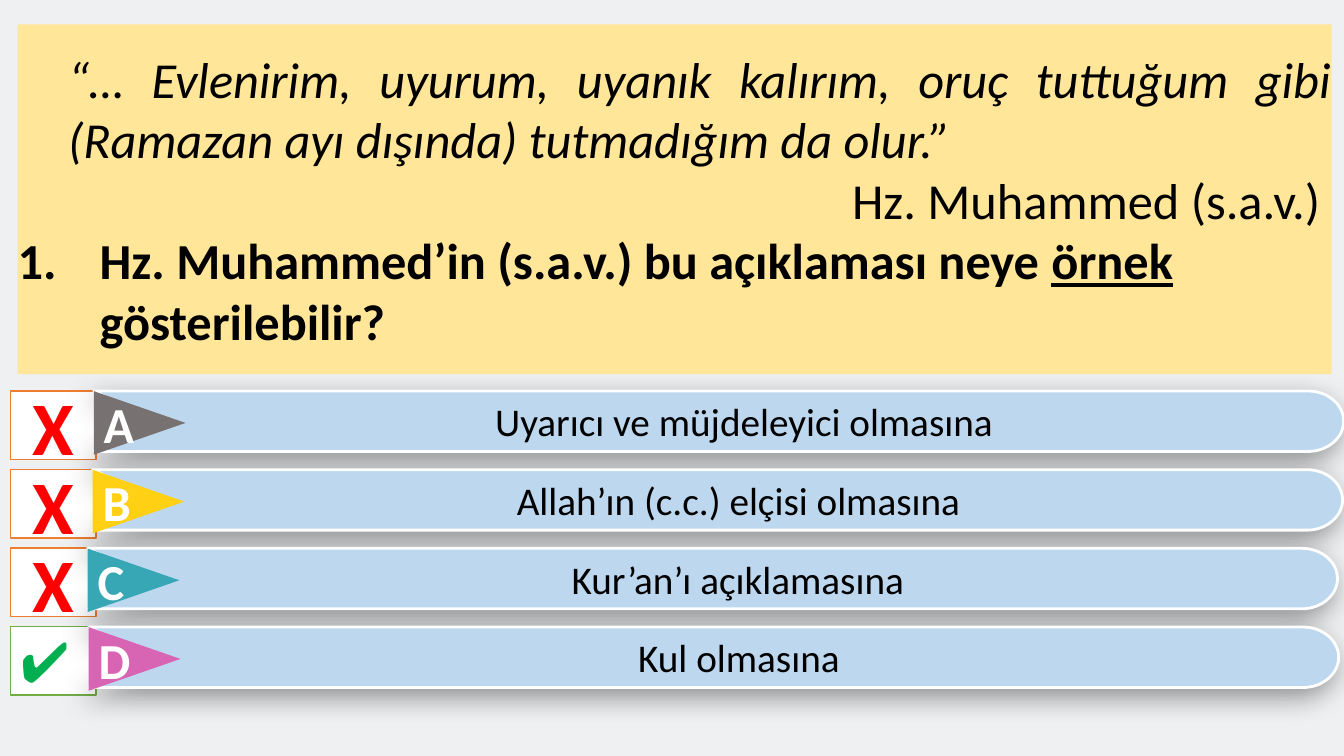
from lxml.etree import SubElement
from pptx import Presentation
from pptx.dml.color import RGBColor
from pptx.enum.shapes import MSO_SHAPE as Preset
from pptx.enum.text import MSO_ANCHOR as Anchor, PP_ALIGN as Align
from pptx.oxml.ns import qn
from pptx.util import Pt

BACKDROP = RGBColor(0xEE, 0xF0, 0xF2)
CREAM = RGBColor(0xFF, 0xE6, 0x99)
SKY = RGBColor(0xBD, 0xD7, 0xEE)
BLACK = RGBColor(0, 0, 0)
WHITE = RGBColor(0xFF, 0xFF, 0xFF)
RED = RGBColor(0xFF, 0, 0)
ORANGE = RGBColor(0xED, 0x7D, 0x31)
CHECK_GREEN = RGBColor(0, 0xB0, 0x50)
BORDER_GREEN = RGBColor(0x70, 0xAD, 0x47)
GRAY = RGBColor(0x77, 0x71, 0x71)
YELLOW = RGBColor(0xFF, 0xD0, 0x13)
TEAL = RGBColor(0x38, 0xA7, 0xB5)
PINK = RGBColor(0xD8, 0x64, 0xB4)

ANSWERS = [
    ("A", "Uyarıcı ve müjdeleyici olmasına", GRAY, 67),
    ("B", "Allah’ın (c.c.) elçisi olmasına ", YELLOW, 66.2),
    ("C", "Kur’an’ı açıklamasına", TEAL, 62.6),
    ("D", "Kul olmasına", PINK, 63.4),
]
CORRECT = "D"
FIRST_TOP = 279.3
VERDICT_STEP = 56
ANSWER_STEP = 56.2


class QuizPage:
    """Draws the parts of a quiz question on one slide in a shared style."""

    font = "Calibri"
    bar_width, bar_height = 892.8, 43.2
    round_x, round_y = 25.4, 21.6
    curve = 0.55
    notch = 45.2
    flag_width, flag_height = 45.4, 65.5

    def __init__(self, page):
        self.page = page
        page.background.fill.solid()
        page.background.fill.fore_color.rgb = BACKDROP

    def paint(self, shape, fill, line=None, width=1):
        shape.shadow.inherit = False
        shape.fill.solid()
        shape.fill.fore_color.rgb = fill
        if line is None:
            shape.line.fill.background()
        else:
            shape.line.color.rgb = line
            shape.line.width = Pt(width)
        shape.text_frame.word_wrap = True
        shape.text_frame.vertical_anchor = Anchor.MIDDLE

    def indent(self, para, left, hanging=0, number=None):
        props = para._p.get_or_add_pPr()
        props.set("marL", str(Pt(left)))
        props.set("indent", str(Pt(-hanging)))
        if number:
            SubElement(props, qn("a:buFont"), typeface="+mj-lt")
            SubElement(props, qn("a:buAutoNum"), type=number)

    def span(self, para, text, size, color=BLACK, bold=False, italic=False, underline=False):
        span = para.add_run()
        span.text = text
        font = span.font
        font.name, font.size, font.color.rgb = self.font, Pt(size), color
        font.bold, font.italic, font.underline = bold, italic, underline

    def question(self):
        box = self.page.shapes.add_shape(Preset.RECTANGLE, Pt(12.7), Pt(17.5), Pt(938.6), Pt(249.8))
        self.paint(box, CREAM)
        frame = box.text_frame
        frame.margin_left = frame.margin_right = frame.margin_top = frame.margin_bottom = 0
        quote = frame.paragraphs[0]
        quote.level, quote.alignment = 1, Align.JUSTIFY
        self.indent(quote, 36)
        self.span(quote, "“… Evlenirim, uyurum, uyanık kalırım, oruç tuttuğum gibi "
                         "(Ramazan ayı dışında) tutmadığım da olur.” ", 36, italic=True)
        speaker = frame.add_paragraph()
        speaker.alignment = Align.RIGHT
        self.span(speaker, "Hz. Muhammed (s.a.v.) ", 36)
        prompt = frame.add_paragraph()
        prompt.alignment = Align.LEFT
        self.indent(prompt, 58.5, 58.5, "arabicPeriod")
        self.span(prompt, "Hz. Muhammed’in (s.a.v.) bu açıklaması neye ", 36, bold=True)
        self.span(prompt, "örnek", 36, bold=True, underline=True)
        self.span(prompt, " gösterilebilir?", 36, bold=True)

    def verdict(self, top, correct):
        box = self.page.shapes.add_shape(Preset.RECTANGLE, Pt(7.5), Pt(top), Pt(61.2), Pt(49))
        self.paint(box, WHITE, BORDER_GREEN if correct else ORANGE)
        para = box.text_frame.paragraphs[0]
        para.alignment = Align.LEFT if correct else Align.CENTER
        if correct:
            self.span(para, "✔", 40, CHECK_GREEN)
        else:
            self.span(para, "X", 54, RED, bold=True)

    def answer(self, left, top, letter, text, color):
        group = self.page.shapes.add_group_shape()
        self.bar(group, left, top, text)
        self.flag(group, left, top, letter, color)

    def bar(self, group, left, top, text):
        corner, right = self.bar_width - self.round_x, self.bar_width
        middle, bottom = self.round_y, self.bar_height
        points = [(corner, 0), (right, middle), (corner, bottom), (0, bottom), (self.notch, middle)]
        outline = group.shapes.build_freeform(Pt(left), Pt(top))
        outline.add_line_segments([(Pt(left + x), Pt(top + y)) for x, y in points])
        bar = outline.convert_to_shape()
        self.round_end(bar, corner, right, middle, bottom)
        self.paint(bar, SKY, WHITE, 2)
        self.cast_shadow(bar)
        para = bar.text_frame.paragraphs[0]
        para.level, para.alignment = 1, Align.CENTER
        self.indent(para, 36)
        self.span(para, text, 28)

    def round_end(self, bar, corner, right, middle, bottom):
        bend_x = corner + self.curve * self.round_x
        bend_y = self.curve * self.round_y
        upper = [(bend_x, 0), (right, middle - bend_y)]
        lower = [(right, middle + bend_y), (bend_x, bottom)]
        segments = list(bar._element.spPr.iter(qn("a:lnTo")))
        for segment, handles in zip(segments[1:3], (upper, lower)):
            segment.tag = qn("a:cubicBezTo")
            end = segment[0]
            for x, y in handles:
                handle = SubElement(segment, qn("a:pt"), x=str(Pt(x)), y=str(Pt(y)))
                end.addprevious(handle)

    def cast_shadow(self, bar):
        effects = bar._element.spPr.find(qn("a:effectLst"))
        shadow = SubElement(effects, qn("a:outerShdw"), blurRad=str(Pt(20)), dist=str(Pt(7)),
                            dir=str(135 * 60000), algn="tr", rotWithShape="0")
        tint = SubElement(shadow, qn("a:srgbClr"), val=str(BLACK))
        SubElement(tint, qn("a:alpha"), val="40000")

    def flag(self, group, left, top, letter, color):
        x = left + (self.flag_height - self.flag_width) / 2
        y = top + 22.8 - self.flag_height / 2
        flag = group.shapes.add_shape(Preset.ISOSCELES_TRIANGLE, Pt(x), Pt(y),
                                      Pt(self.flag_width), Pt(self.flag_height))
        flag.rotation = 90
        self.paint(flag, color)
        flag.text_frame._txBody.bodyPr.set("vert", "vert270")
        para = flag.text_frame.paragraphs[0]
        para.alignment = Align.CENTER
        self.span(para, letter, 36, WHITE, bold=True)


def main():
    deck = Presentation()
    deck.slide_width, deck.slide_height = Pt(960), Pt(540)
    quiz = QuizPage(deck.slides.add_slide(deck.slide_layouts[6]))
    rows = list(enumerate(ANSWERS))
    for row, (letter, *_) in reversed(rows):
        quiz.verdict(FIRST_TOP + VERDICT_STEP * row, letter == CORRECT)
    for row, (letter, text, color, left) in rows:
        quiz.answer(left, FIRST_TOP + ANSWER_STEP * row, letter, text, color)
    quiz.question()
    deck.save("out.pptx")


if __name__ == "__main__":
    main()
